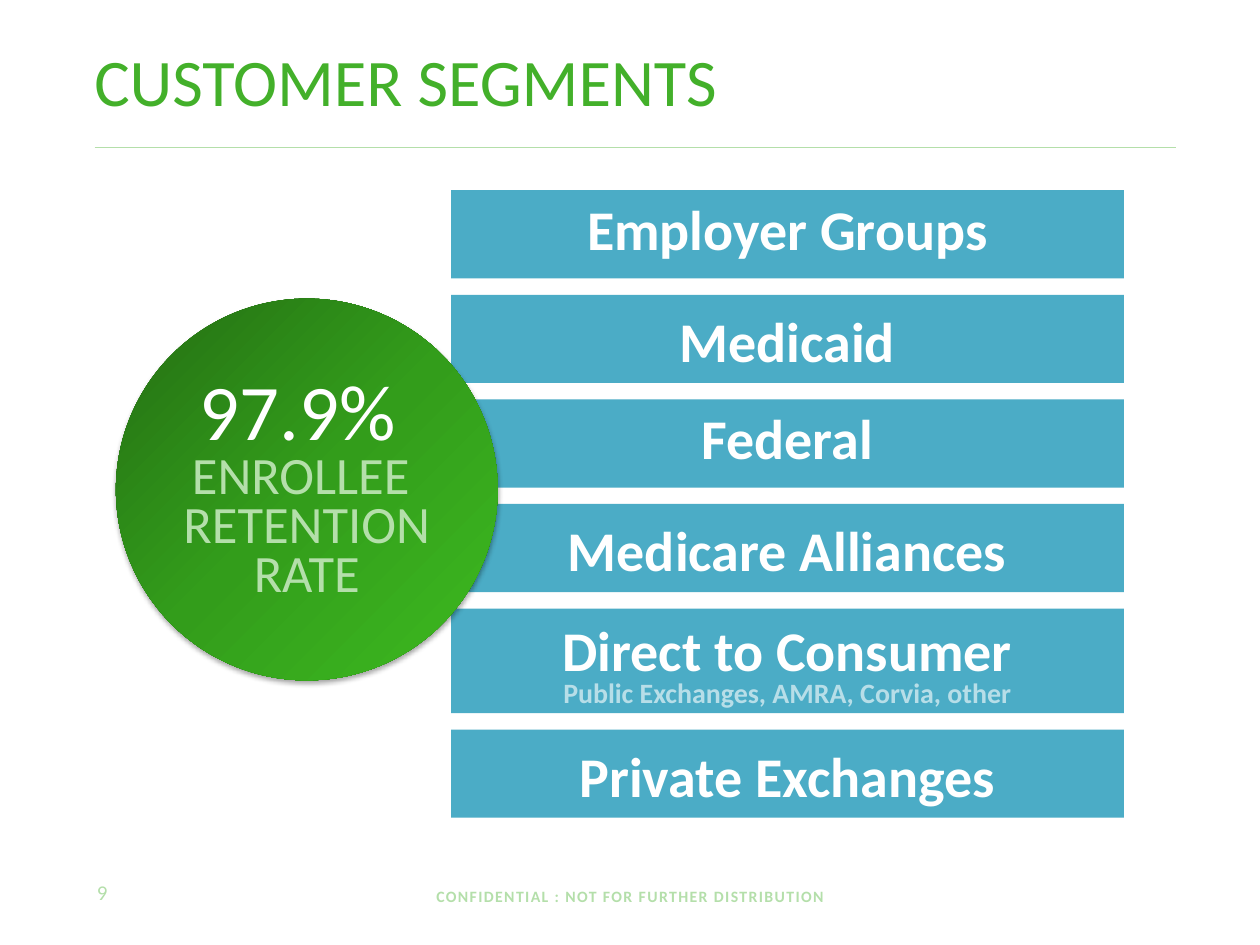
from dataclasses import dataclass

from lxml.etree import SubElement
from pptx import Presentation
from pptx.dml.color import RGBColor
from pptx.enum.shapes import MSO_CONNECTOR as Connector, MSO_SHAPE as Preset
from pptx.enum.text import MSO_ANCHOR as Anchor, PP_ALIGN as Align
from pptx.oxml import parse_xml
from pptx.oxml.ns import nsdecls, qn
from pptx.util import Inches, Pt


@dataclass(frozen=True)
class Theme:
    font: str = "Calibri"
    green: str = "43B02A"
    pale_green: str = "B4DFAA"
    blue: str = "4BACC6"
    pale_blue: str = "B7DEE8"
    white: str = "FFFFFF"
    circle_stops: tuple = ((0, "246E13"), (50, "339D1B"), (100, "3DBA20"))
    title: float = 38
    rate: float = 45
    rate_label: float = 30
    segment: float = 32
    detail: float = 16
    footer: float = 9
    page: float = 12


@dataclass(frozen=True)
class Segment:
    name: str
    detail: str = ""
    height: float = 0.7
    drop: float = 0.0  # how far the text sits below the middle of the bar


THEME = Theme()
BAR_LEFT, BAR_TOP, BAR_WIDTH, BAR_GAP = 3.58, 1.51, 5.34, 0.13
SEGMENTS = (
    Segment("Employer Groups"),
    Segment("Medicaid", drop=0.06),
    Segment("Federal"),
    Segment("Medicare Alliances", drop=0.06),
    Segment("Direct to Consumer", "Public Exchanges, AMRA, Corvia, other", 0.83, 0.06),
    Segment("Private Exchanges", drop=0.06),
)


def add_text(paragraph, text: str, *, size: float, color: str,
             bold: bool = False, tracking: float = 0) -> None:
    """Append runs to a paragraph; a newline becomes a line break."""
    for index, line in enumerate(text.split("\n")):
        if index:
            paragraph.add_line_break()
        run = paragraph.add_run()
        run.text = line
        run.font.name = THEME.font
        run.font.size = Pt(size)
        run.font.bold = bold
        run.font.color.rgb = RGBColor.from_string(color)
        if tracking:
            run.font._element.set("spc", str(round(tracking * 100)))


def set_frame(shape, *, anchor=Anchor.TOP, insets=(0.1, 0.05, 0.1, 0.05)):
    frame = shape.text_frame
    frame.word_wrap = True
    frame.vertical_anchor = anchor
    (frame.margin_left, frame.margin_top,
     frame.margin_right, frame.margin_bottom) = map(Inches, insets)
    return frame


def add_box(slide, left: float, top: float, width: float, height: float, **frame_format):
    box = slide.shapes.add_textbox(*map(Inches, (left, top, width, height)))
    return set_frame(box, **frame_format).paragraphs[0]


def add_segment(slide, segment: Segment, top: float) -> None:
    bar = slide.shapes.add_shape(
        Preset.RECTANGLE, *map(Inches, (BAR_LEFT, top, BAR_WIDTH, segment.height)))
    bar.shadow.inherit = False
    bar.fill.solid()
    bar.fill.fore_color.rgb = RGBColor.from_string(THEME.blue)
    bar.line.fill.background()
    frame = set_frame(bar, anchor=Anchor.MIDDLE, insets=(0.1, 2 * segment.drop, 0.1, 0))
    lines = [(segment.name, THEME.segment, THEME.white)]
    if segment.detail:
        lines.append((segment.detail, THEME.detail, THEME.pale_blue))
    for index, (text, size, color) in enumerate(lines):
        paragraph = frame.add_paragraph() if index else frame.paragraphs[0]
        paragraph.alignment = Align.CENTER
        paragraph.line_spacing = 0.8
        add_text(paragraph, text, size=size, color=color, bold=True)


def add_rule(slide) -> None:
    rule = slide.shapes.add_connector(
        Connector.STRAIGHT, *map(Inches, (0.75, 1.17, 9.33, 1.17)))
    rule.line.color.rgb = RGBColor.from_string(THEME.pale_green)
    rule.line.width = Pt(0.75)
    SubElement(rule._element.spPr, qn("a:effectLst"))


def add_retention_circle(slide) -> None:
    """Draw the circle with its three-stop gradient and soft shadow."""
    circle = slide.shapes.add_shape(Preset.OVAL, *map(Inches, (0.92, 2.37, 3.03, 3.03)))
    circle.line.fill.background()
    stops = "".join(
        f'<a:gs pos="{position * 1000}"><a:srgbClr val="{color}"/></a:gs>'
        for position, color in THEME.circle_stops)
    properties = circle._element.spPr
    properties.find(qn("a:prstGeom")).addnext(parse_xml(
        f'<a:gradFill {nsdecls("a")} rotWithShape="1"><a:gsLst>{stops}</a:gsLst>'
        '<a:lin ang="2700000" scaled="0"/></a:gradFill>'))
    properties.append(parse_xml(
        f'<a:effectLst {nsdecls("a")}><a:outerShdw blurRad="{Pt(3.1)}" dist="{Pt(1.8)}" '
        'dir="5400000" rotWithShape="0"><a:srgbClr val="000000"><a:alpha val="35000"/>'
        '</a:srgbClr></a:outerShdw></a:effectLst>'))

    rate = add_box(slide, 1.17, 3.22, 2.53, 1.58, anchor=Anchor.MIDDLE, insets=(0, 0, 0, 0))
    rate.alignment = Align.CENTER
    rate.line_spacing = Pt(28)
    add_text(rate, "97.9% \n", size=THEME.rate, color=THEME.white)
    add_text(rate, "ENROLLEE \nRETENTION RATE", size=THEME.rate_label, color=THEME.pale_green)


def add_footer(slide) -> None:
    notice = add_box(slide, 0, 7.01, 10, 0.24, insets=(0, 0, 0, 0))
    notice.alignment = Align.CENTER
    notice.line_spacing = 1.2
    notice.space_before = Pt(2)
    add_text(notice, "CONFIDENTIAL : NOT FOR FURTHER DISTRIBUTION",
             size=THEME.footer, color=THEME.pale_green, bold=True, tracking=0.8)
    page = add_box(slide, 0.67, 6.93, 0.75, 0.32)
    add_text(page, "9", size=THEME.page, color=THEME.pale_green)


def main() -> None:
    deck = Presentation()
    deck.slide_width, deck.slide_height = Inches(10), Inches(7.5)
    slide = deck.slides.add_slide(deck.slide_layouts[6])

    top = BAR_TOP
    for segment in SEGMENTS:
        add_segment(slide, segment, top)
        top += segment.height + BAR_GAP

    title = add_box(slide, 0.65, 0.44, 6.6, 0.58)
    title.line_spacing = 0.7
    add_text(title, "CUSTOMER SEGMENTS", size=THEME.title, color=THEME.green)
    add_rule(slide)
    add_retention_circle(slide)
    add_footer(slide)
    deck.save("out.pptx")


if __name__ == "__main__":
    main()
